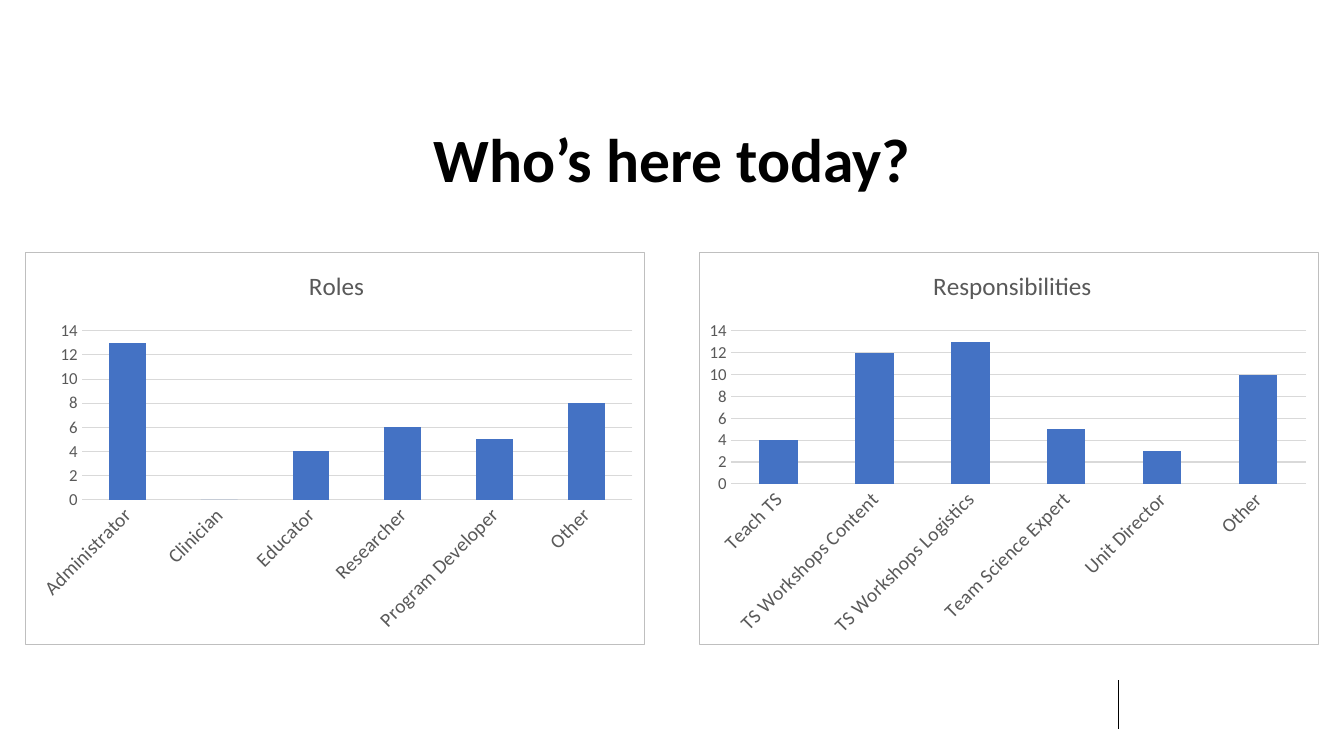
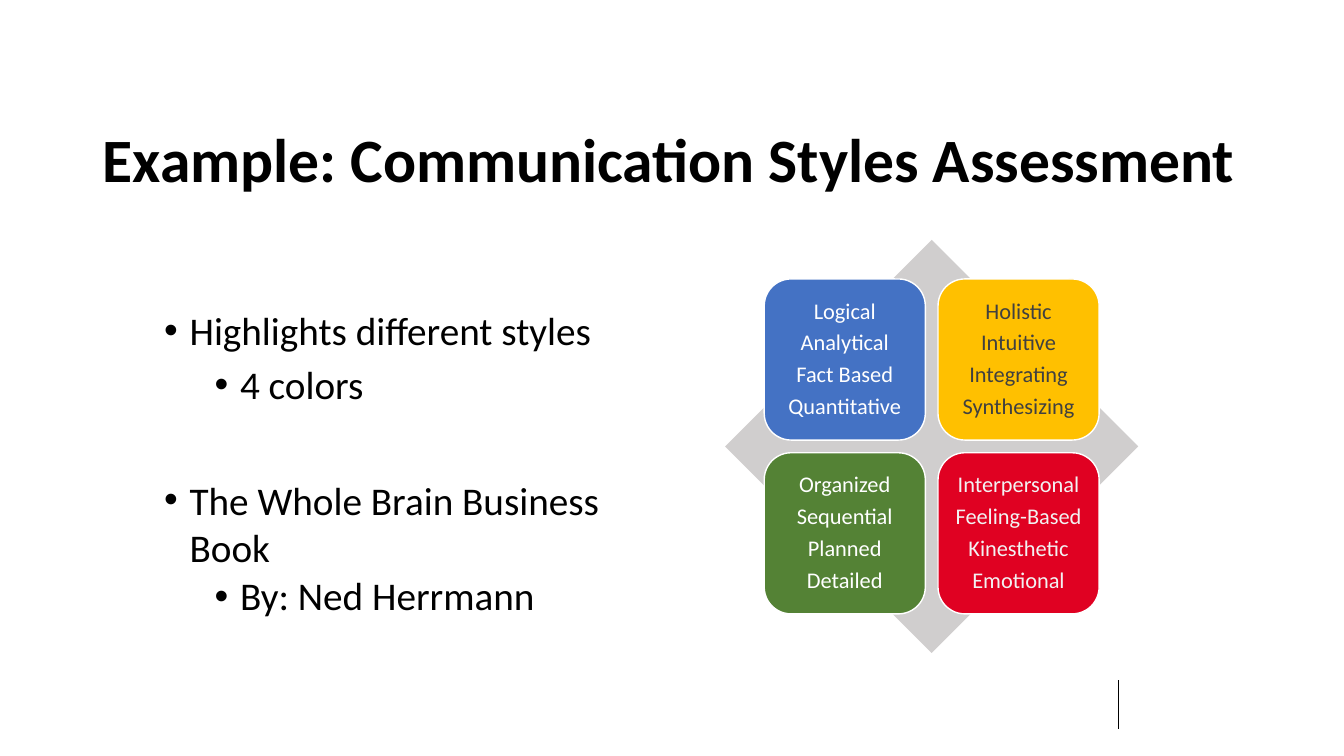
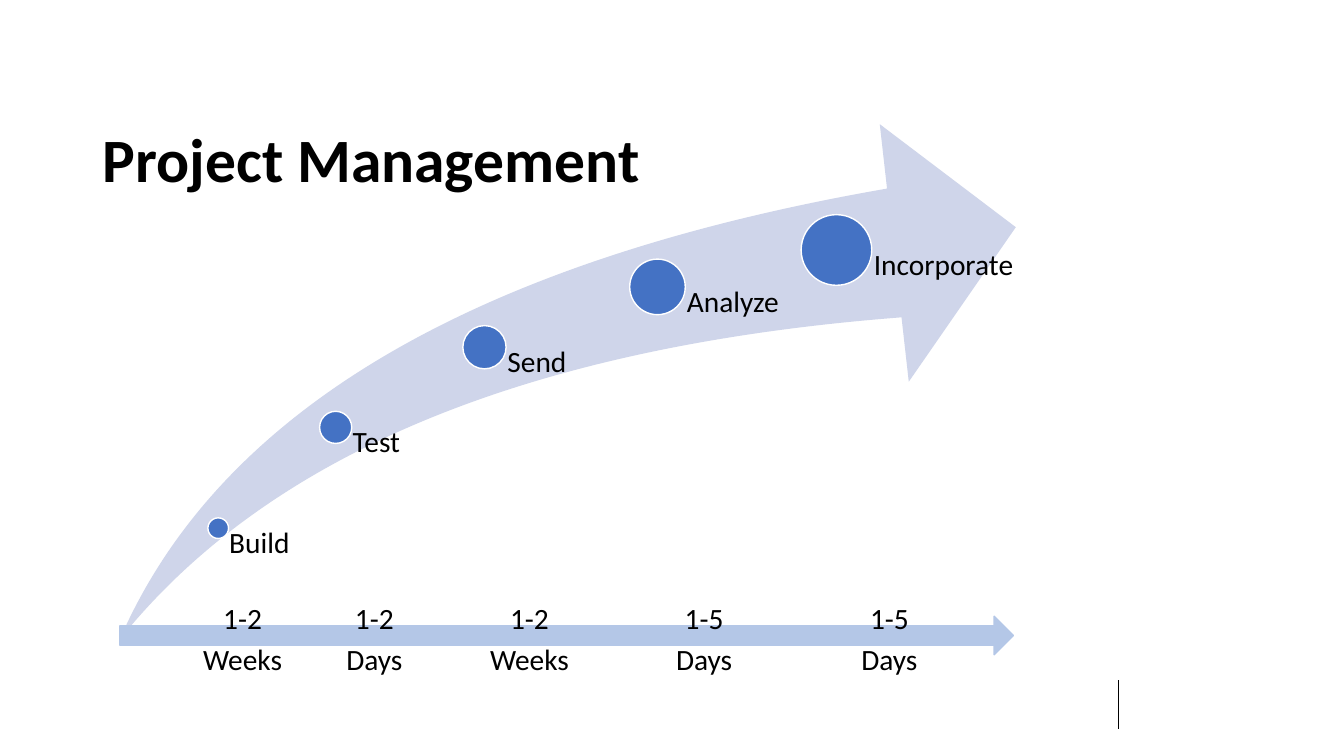
"""Build three workshop slides: audience charts, communication styles and a project timeline."""
import dataclasses
import itertools

import pptx
import pptx.chart.data
import pptx.dml.color
import pptx.enum.chart
import pptx.enum.shapes
import pptx.enum.text
import pptx.oxml
import pptx.oxml.ns
import pptx.util

Cm = pptx.util.Cm
Pt = pptx.util.Pt
SHAPE = pptx.enum.shapes.MSO_SHAPE
ALIGN = pptx.enum.text.PP_ALIGN
ANCHOR = pptx.enum.text.MSO_ANCHOR
NO_TICK = pptx.enum.chart.XL_TICK_MARK.NONE
qn = pptx.oxml.ns.qn

FONT = "Calibri"
BLACK, WHITE, BLUE, GREY = "000000", "FFFFFF", "4472C4", "595959"
SPACE_AFTER = 0.34


@dataclasses.dataclass(frozen=True)
class Area:
    left: float
    top: float
    width: float
    height: float

    def lengths(self):
        return Cm(self.left), Cm(self.top), Cm(self.width), Cm(self.height)


@dataclasses.dataclass(frozen=True)
class Survey:
    title: str
    answers: dict[str, int]
    left: float
    title_left: float
    plot: dict[str, float]


@dataclasses.dataclass(frozen=True)
class Style:
    traits: tuple[str, ...]
    fill: str
    color: str


@dataclasses.dataclass(frozen=True)
class Milestone:
    label: str
    center_x: float
    center_y: float
    diameter: float
    period_left: float
    period: tuple[str, str]


TITLE_AREA = Area(2.34, 2.55, 29.21, 2.51)

SURVEYS = (
    Survey("Responsibilities",
           {"Teach TS": 4, "TS Workshops Content": 12, "TS Workshops Logistics": 13,
            "Team Science Expert": 5, "Unit Director": 3, "Other": 10},
           17.62, 0.37, {"x": 0.05, "y": 0.2, "w": 0.93, "h": 0.39}),
    Survey("Roles",
           {"Administrator": 13, "Clinician": 0, "Educator": 4,
            "Researcher": 6, "Program Developer": 5, "Other": 8},
           0.64, 0.45, {"x": 0.09, "y": 0.2, "w": 0.89, "h": 0.43}),
)

STYLES = (
    Style(("Logical", "Analytical", "Fact Based", "Quantitative"), BLUE, WHITE),
    Style(("Holistic", "Intuitive", "Integrating", "Synthesizing"), "FFC000", "404040"),
    Style(("Organized", "Sequential", "Planned", "Detailed"), "548235", WHITE),
    Style(("Interpersonal", "Feeling-Based", "Kinesthetic", "Emotional"), "E00122", "F2F2F2"),
)

MILESTONES = (
    Milestone("Build", 5.5, 13.31, 0.52, 4.45, ("1-2", "Weeks")),
    Milestone("Test", 8.46, 10.77, 0.81, 7.77, ("1-2", "Days")),
    Milestone("Send", 12.21, 8.75, 1.09, 11.68, ("1-2", "Weeks")),
    Milestone("Analyze", 16.57, 7.23, 1.4, 16.08, ("1-5", "Days")),
    Milestone("Incorporate", 21.08, 6.3, 1.78, 20.75, ("1-5", "Days")),
)


def rgb(color: str):
    return pptx.dml.color.RGBColor.from_string(color)


def format_font(font, size: float, color: str, bold: bool = False):
    font.name = FONT
    font.size = Pt(size)
    font.bold = bold
    font.color.rgb = rgb(color)


def write(frame, text: str, *, size: float, color: str = BLACK, bold: bool = False,
          align=ALIGN.LEFT, spacing: float = 0.9, before: float = 0, after: float = 0,
          bullet_indent: float = 0):
    para = frame.paragraphs[0]
    if para.runs:
        para = frame.add_paragraph()
    if bullet_indent:
        properties = para._p.get_or_add_pPr()
        properties.set("marL", str(Cm(bullet_indent)))
        properties.set("indent", str(-Cm(0.64)))
        for bullet in ('buFont {} typeface="Arial"', 'buChar {} char="•"'):
            properties.append(pptx.oxml.parse_xml(
                f'<a:{bullet.format(pptx.oxml.ns.nsdecls("a"))}/>'))
    para.alignment = align
    para.line_spacing = spacing
    para.space_before = Pt(before)
    para.space_after = Pt(after)
    span = para.add_run()
    span.text = text
    format_font(span.font, size, color, bold)


def set_frame(frame, anchor, insets: tuple[float, float, float, float]):
    frame.word_wrap = True
    frame.vertical_anchor = anchor
    frame.margin_left, frame.margin_top, frame.margin_right, frame.margin_bottom = map(Cm, insets)
    return frame


def add_frame(page, area: Area, anchor=ANCHOR.TOP, insets=(0.25, 0.13, 0.25, 0.13)):
    return set_frame(page.shapes.add_textbox(*area.lengths()).text_frame, anchor, insets)


def add_shape(page, kind, area: Area, fill: str, line: str | None = None):
    shape = page.shapes.add_shape(kind, *area.lengths())
    shape.shadow.inherit = False
    shape.fill.solid()
    shape.fill.fore_color.rgb = rgb(fill)
    if line:
        shape.line.color.rgb = rgb(line)
        shape.line.width = Pt(1)
    else:
        shape.line.fill.background()
    return shape


def add_page(deck, title: str, align=ALIGN.LEFT):
    page = deck.slides.add_slide(deck.slide_layouts[6])
    rule = page.shapes.add_connector(pptx.enum.shapes.MSO_CONNECTOR.STRAIGHT,
                                     Cm(28.18), Cm(17.14), Cm(28.18), Cm(18.36))
    rule.line.color.rgb = rgb(BLACK)
    rule.line.width = Pt(0.5)
    rule._element.spPr.append(
        pptx.oxml.parse_xml(f'<a:effectLst {pptx.oxml.ns.nsdecls("a")}/>'))
    write(add_frame(page, TITLE_AREA, ANCHOR.BOTTOM), title, size=44, bold=True, align=align)
    return page


def set_layout(element, index: int, target: str, fractions: dict[str, float]):
    for layout in element.findall(qn("c:layout")):
        element.remove(layout)
    values = "".join(f'<c:{name} val="{value}"/>' for name, value in fractions.items())
    element.insert(index, pptx.oxml.parse_xml(
        f'<c:layout {pptx.oxml.ns.nsdecls("c")}><c:manualLayout>{target}'
        f'<c:xMode val="edge"/><c:yMode val="edge"/>{values}</c:manualLayout></c:layout>'))


def add_survey(page, survey: Survey):
    data = pptx.chart.data.CategoryChartData()
    data.categories = list(survey.answers)
    data.add_series("Series 1", list(survey.answers.values()))
    area = Area(survey.left, 6.35, 15.62, 9.91)
    chart = page.shapes.add_chart(pptx.enum.chart.XL_CHART_TYPE.COLUMN_CLUSTERED,
                                  *area.lengths(), data).chart
    format_font(chart.font, 10, BLACK)
    chart.has_legend = False
    chart.has_title = True
    write(chart.chart_title.text_frame, survey.title, size=18, color=GREY,
          align=ALIGN.CENTER, spacing=1)

    plot = chart.plots[0]
    plot.gap_width = 150
    plot.vary_by_categories = False
    bars = plot.series[0].format.fill
    bars.solid()
    bars.fore_color.rgb = rgb(BLUE)

    for axis, size in ((chart.category_axis, 14), (chart.value_axis, 12)):
        axis.major_tick_mark = axis.minor_tick_mark = NO_TICK
        axis.format.line.fill.background()
        format_font(axis.tick_labels.font, size, GREY)
    labels = chart.category_axis._element.find(qn("c:txPr"))
    labels.find(qn("a:bodyPr")).set("rot", "-2700000")
    chart.value_axis.minimum_scale = 0
    chart.value_axis.maximum_scale = 14
    chart.value_axis.major_unit = 2
    grid = chart.value_axis.major_gridlines.format.line
    grid.color.rgb = rgb("D9D9D9")
    grid.width = Pt(0.75)

    body = chart._chartSpace.find(qn("c:chart"))
    set_layout(body.find(qn("c:title")), 1, "", {"x": survey.title_left, "y": 0.03})
    set_layout(body.find(qn("c:plotArea")), 0, '<c:layoutTarget val="inner"/>', survey.plot)
    body.addnext(pptx.oxml.parse_xml(
        f'<c:spPr {pptx.oxml.ns.nsdecls("c", "a")}>'
        f'<a:solidFill><a:srgbClr val="{WHITE}"/></a:solidFill>'
        f'<a:ln w="{Pt(0.75)}"><a:solidFill><a:srgbClr val="BFBFBF"/></a:solidFill></a:ln>'
        '</c:spPr>'))


def build_audience(deck):
    page = add_page(deck, "Who’s here today?", ALIGN.CENTER)
    for survey in SURVEYS:
        add_survey(page, survey)


def build_styles(deck):
    page = add_page(deck, "Example: Communication Styles Assessment")
    frame = add_frame(page, Area(3.89, 6.4, 11.68, 9.7))
    write(frame, "Highlights different styles", size=28, spacing=2, bullet_indent=0.64)
    write(frame, "4 colors", size=28, spacing=1, before=5, bullet_indent=1.91)
    write(frame, "The Whole Brain Business Book", size=28, spacing=1, before=49,
          bullet_indent=0.64)
    write(frame, "By: Ned Herrmann", size=28, before=5, bullet_indent=1.91)

    center_x, center_y, diamond, side, gap = 23.48, 11.25, 10.41, 4.06, 0.32
    add_shape(page, SHAPE.DIAMOND,
              Area(center_x - diamond / 2, center_y - diamond / 2, diamond, diamond), "D0CECE")
    left, top = (center - side - gap / 2 for center in (center_x, center_y))
    for (row, column), style in zip(itertools.product(range(2), repeat=2), STYLES):
        area = Area(left + column * (side + gap), top + row * (side + gap), side, side)
        box = add_shape(page, SHAPE.ROUNDED_RECTANGLE, area, style.fill, WHITE)
        set_frame(box.text_frame, ANCHOR.MIDDLE, (0.18, 0.18, 0.18, 0.18))
        for trait in style.traits:
            write(box.text_frame, trait, size=16, color=style.color, align=ALIGN.CENTER,
                  after=16 * SPACE_AFTER)


def build_timeline(deck):
    page = add_page(deck, "Project Management")
    swoosh = add_shape(page, SHAPE.SWOOSH_ARROW, Area(3.02, 3.13, 22.58, 12.98), "CFD5EA")
    swoosh.adjustments[0] = swoosh.adjustments[1] = 0.25
    add_shape(page, SHAPE.RIGHT_ARROW, Area(3.02, 15.53, 22.52, 0.97), "B4C7E7", "B4C7E7")
    for stone in MILESTONES:
        radius = stone.diameter / 2
        add_shape(page, SHAPE.OVAL,
                  Area(stone.center_x - radius, stone.center_y - radius,
                       stone.diameter, stone.diameter), BLUE, WHITE)
        label = add_frame(page, Area(stone.center_x, stone.center_y, 4.6, 16.66 - stone.center_y),
                          insets=(stone.diameter * 0.53, 0, 0, 0))
        write(label, stone.label, size=21, after=21 * SPACE_AFTER)
        period = add_frame(page, Area(stone.period_left, 14.68, 3.33, 2.92),
                           ANCHOR.MIDDLE, (0, 0.58, 0, 0.58))
        for line in stone.period:
            write(period, line, size=21, align=ALIGN.CENTER, after=21 * SPACE_AFTER)


def main():
    deck = pptx.Presentation()
    deck.slide_width, deck.slide_height = Cm(33.87), Cm(19.05)
    build_audience(deck)
    build_styles(deck)
    build_timeline(deck)
    deck.save("out.pptx")


if __name__ == "__main__":
    main()
